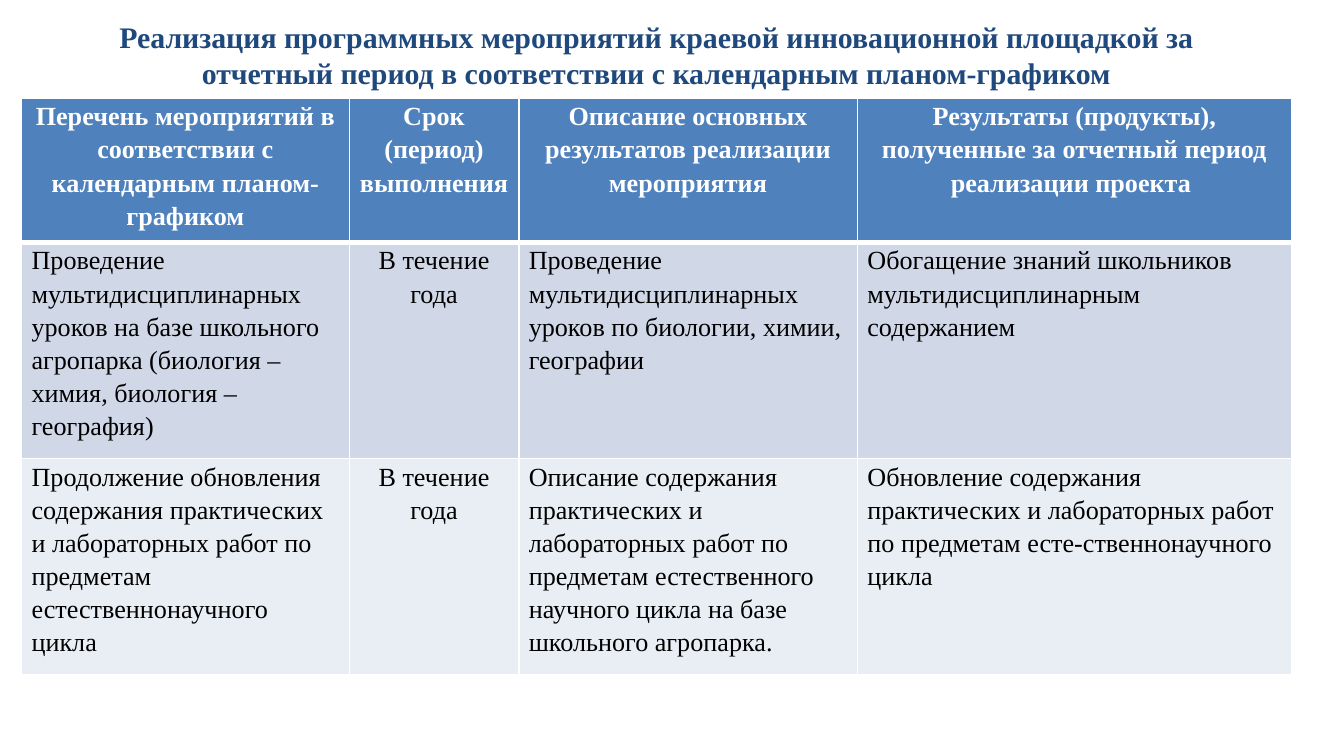
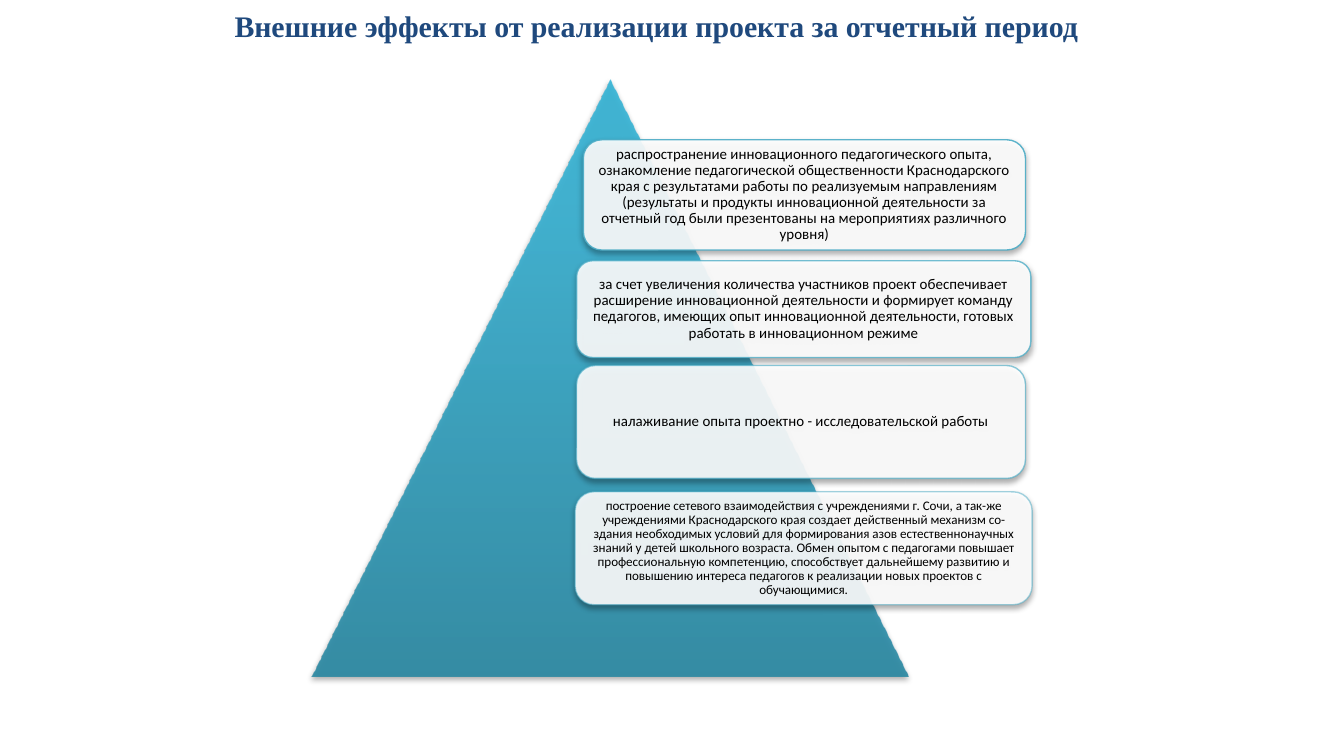
import pptx
import pptx.util
import pptx.dml.color
import pptx.enum.shapes
import pptx.enum.text
import pptx.oxml
import pptx.oxml.ns
import lxml.etree

Inches, Pt = pptx.util.Inches, pptx.util.Pt
ALIGN = pptx.enum.text.PP_ALIGN
SHAPE = pptx.enum.shapes.MSO_SHAPE
qn = pptx.oxml.ns.qn
NAVY, BLUE, TEAL, WHITE, BLACK = "1F497D", "4F81BD", "4BACC6", "FFFFFF", "000000"
BANDS = [BLUE, "D0D8E8", "E9EDF4"]
SERIF, SANS = "Times New Roman", "Calibri"

COLS = [2.44, 1.26, 2.52, 3.23]
PLAN = [
    ["Перечень мероприятий в соответствии с календарным планом- графиком",
     "Срок (период) выполнения",
     "Описание основных результатов реализации мероприятия",
     "Результаты (продукты), полученные за отчетный период реализации проекта "],
    ["Проведение мультидисциплинарных уроков на базе школьного агропарка (биология – химия, биология – география)",
     "В течение года",
     "Проведение мультидисциплинарных уроков по биологии, химии, географии",
     "Обогащение знаний школьников мультидисциплинарным содержанием"],
    ["Продолжение обновления содержания практических и лабораторных работ по предметам естественнонаучного цикла",
     "В течение года",
     "Описание содержания практических и лабораторных работ по предметам естественного научного цикла на базе школьного агропарка.",
     "Обновление содержания практических и лабораторных работ по предметам есте-ственнонаучного цикла"],
]
EFFECTS = [
    ((2.02, 0.45, 3.29, 0.82), 90, 8,
     "распространение инновационного педагогического опыта, ознакомление педагогической общественности Краснодарского края с результатами работы по реализуемым направлениям (результаты и продукты инновационной деятельности за отчетный год были презентованы на мероприятиях различного уровня)"),
    ((1.97, 1.35, 3.38, 0.72), 77, 8,
     "за счет увеличения количества участников проект обеспечивает расширение инновационной деятельности и формирует команду педагогов, имеющих опыт инновационной деятельности, готовых работать в инновационном режиме"),
    ((1.97, 2.13, 3.34, 0.84), 63, 8,
     "налаживание опыта проектно - исследовательской работы"),
    ((1.96, 3.07, 3.4, 0.84), 50, 7,
     "построение сетевого взаимодействия с учреждениями г. Сочи, а так-же учреждениями Краснодарского края создает действенный механизм со-здания необходимых условий для формирования азов естественнонаучных знаний у детей школьного возраста. Обмен опытом с педагогами повышает профессиональную компетенцию, способствует дальнейшему развитию и повышению интереса педагогов к реализации новых проектов с обучающимися."),
]


def color(code):
    return pptx.dml.color.RGBColor.from_string(code)


def parse(tag, body):
    return pptx.oxml.parse_xml(f"<a:{tag} {pptx.oxml.ns.nsdecls('a')}{body}</a:{tag}>")


def tint(code, alpha):
    return f'<a:srgbClr val="{code}"><a:alpha val="{alpha * 1000}"/></a:srgbClr>'


def style(para, size, face, code, bold=False, align=ALIGN.CENTER, space=1.0):
    para.alignment = align
    para.line_spacing = space
    para.font.size = Pt(size)
    para.font.name = face
    para.font.bold = bold
    para.font.color.rgb = color(code)


def inset(frame, side, edge):
    frame.margin_left = frame.margin_right = side
    frame.margin_top = frame.margin_bottom = edge


def title(slide, text, box):
    frame = slide.shapes.add_textbox(*map(Inches, box)).text_frame
    frame.word_wrap = True
    frame.auto_size = pptx.enum.text.MSO_AUTO_SIZE.SHAPE_TO_FIT_TEXT
    frame.text = text
    style(frame.paragraphs[0], 16, SERIF, NAVY, True)


def border(cell, top, bottom):
    props = cell._tc.get_or_add_tcPr()
    for spot, (side, width) in enumerate(zip("LRTB", (1, 1, top, bottom))):
        line = parse(f"ln{side}", f' w="{Pt(width)}"><a:solidFill><a:srgbClr val="{WHITE}"/></a:solidFill>')
        props.insert(spot, line)


def plan(slide, box):
    frame = slide.shapes.add_table(len(PLAN), len(COLS), *map(Inches, box))
    table = frame.table
    for column, width in zip(table.columns, COLS):
        column.width = Inches(width)
    for r, (row, texts) in enumerate(zip(table.rows, PLAN)):
        row.height = Inches(0.41)
        head = r == 0
        for c, (cell, text) in enumerate(zip(row.cells, texts)):
            cell.text = text
            inset(cell, Pt(5.4), 0)
            cell.fill.solid()
            cell.fill.fore_color.rgb = color(BANDS[r])
            border(cell, 3 if r == 1 else 1, 3 if head else 1)
            style(cell.text_frame.paragraphs[0], 14, SERIF, WHITE if head else BLACK, head,
                  ALIGN.CENTER if head or c == 1 else ALIGN.LEFT, 1.15)
    frame.width, frame.height = map(Inches, box[2:])


def shade(shape):
    shape.shadow.inherit = False
    drop = parse("outerShdw", f' blurRad="{Pt(3.1)}" dist="{Pt(1.8)}" dir="5400000" rotWithShape="0">'
                 + tint(BLACK, 35))
    shape.element.spPr.find(qn("a:effectLst")).append(drop)


def paint(fill, node, code, alpha):
    fill.solid()
    fill.fore_color.rgb = color(code)
    shade = node.find(qn("a:solidFill")).find(qn("a:srgbClr"))
    lxml.etree.SubElement(shade, qn("a:alpha")).set("val", str(alpha * 1000))


def peak(slide, box):
    shape = slide.shapes.add_shape(SHAPE.ISOSCELES_TRIANGLE, *map(Inches, box))
    shape.line.fill.background()
    shape.fill.background()
    stops = "".join(f'<a:gs pos="{at * 1000}">{tint(code, 90)}</a:gs>'
                    for at, code in ((0, "2A88A2"), (80, "37B1D2"), (100, "34B4D6")))
    props = shape.element.spPr
    props.replace(props.find(qn("a:noFill")),
                  parse("gradFill", f'><a:gsLst>{stops}</a:gsLst><a:lin ang="16200000" scaled="0"/>'))
    shade(shape)


def card(slide, box, alpha, size, text):
    shape = slide.shapes.add_shape(SHAPE.ROUNDED_RECTANGLE, *map(Inches, box))
    props = shape.element.spPr
    paint(shape.fill, props, WHITE, 90)
    shape.line.width = Pt(0.75)
    paint(shape.line.fill, props.find(qn("a:ln")), TEAL, alpha)
    shade(shape)
    frame = shape.text_frame
    frame.word_wrap = True
    frame.vertical_anchor = pptx.enum.text.MSO_ANCHOR.MIDDLE
    inset(frame, Inches(0.03), Inches(0.03))
    frame.text = text
    style(frame.paragraphs[0], size, SANS, BLACK, space=0.9)


def pyramid(slide, box):
    left, top = box[:2]
    peak(slide, box)
    for (x, y, wide, high), alpha, size, text in EFFECTS:
        card(slide, (left + x, top + y, wide, high), alpha, size, text)


def main():
    deck = pptx.Presentation()
    deck.slide_width = Inches(10)
    deck.slide_height = deck.slide_width * 9 // 16
    blank = deck.slide_layouts[6]

    first = deck.slides.add_slide(blank)
    title(first, "Реализация программных мероприятий краевой инновационной площадкой за отчетный период в соответствии с календарным планом-графиком",
          (0.67, 0.09, 8.43, 0.64))
    plan(first, (0.16, 0.73, 9.45, 4.29))

    second = deck.slides.add_slide(blank)
    title(second, "Внешние эффекты от реализации проекта за отчетный период", (0.67, 0.01, 8.43, 0.37))
    pyramid(second, (2.32, 0.59, 4.44, 4.44))
    deck.save("out.pptx")


if __name__ == "__main__":
    main()
